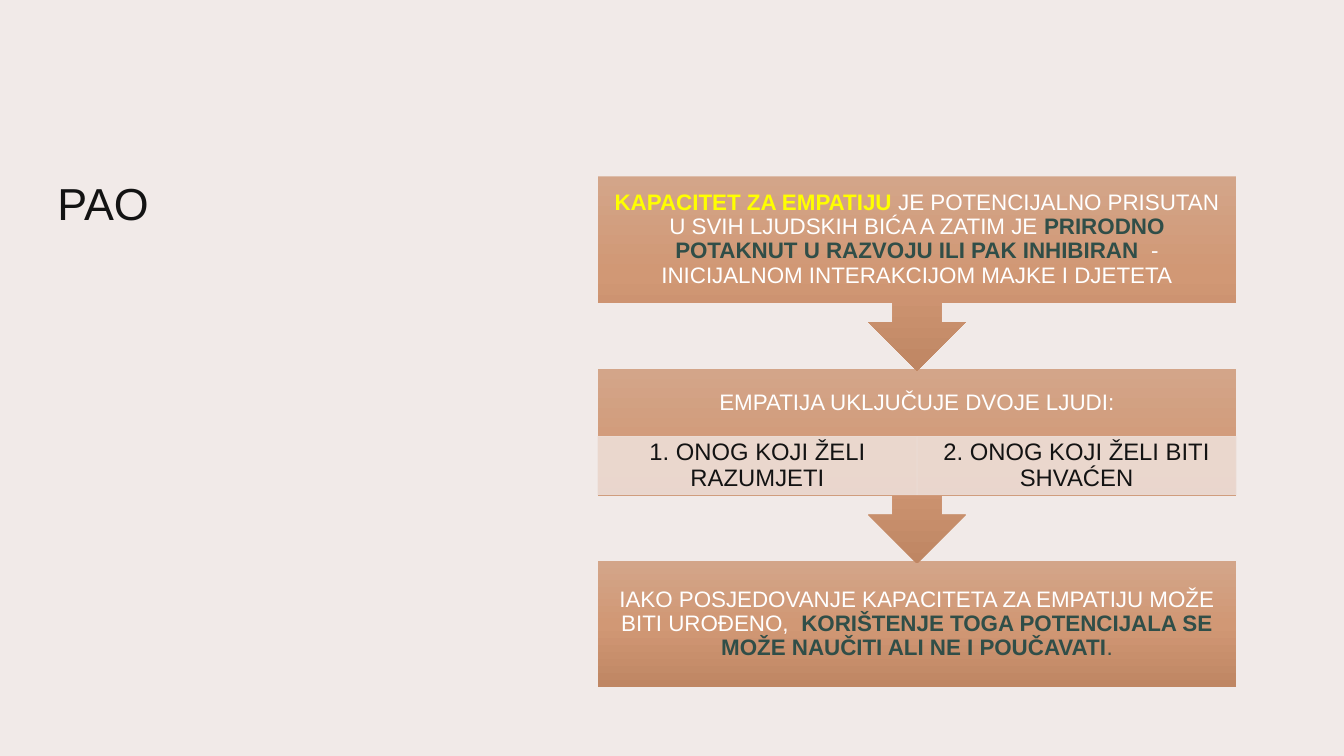
from copy import deepcopy

from pptx import Presentation
from pptx.dml.color import RGBColor
from pptx.enum import shapes, text
from pptx.oxml.ns import qn
from pptx.util import Inches, Pt
from lxml import etree

BACKGROUND = RGBColor(0xF1, 0xEA, 0xE8)
INK = RGBColor(0x13, 0x13, 0x13)
WHITE = RGBColor(0xFF, 0xFF, 0xFF)
YELLOW = RGBColor(0xFF, 0xFF, 0x00)
GREEN = RGBColor(0x30, 0x4E, 0x48)
PALE = RGBColor(0xED, 0xDE, 0xD7)
COPPER = [(0, RGBColor(0xD3, 0xA5, 0x89)), (0.5, RGBColor(0xD1, 0x98, 0x75)),
          (1, RGBColor(0xBF, 0x86, 0x63))]


def write(shape, runs, size, align, anchor, margins):
    """Fill a shape with one paragraph of (text, colour, bold) runs."""
    frame = shape.text_frame
    settings = {"word_wrap": True, "vertical_anchor": anchor}
    sides = ("margin_left", "margin_top", "margin_right", "margin_bottom")
    settings.update(zip(sides, map(Inches, margins)))
    for name, value in settings.items():
        setattr(frame, name, value)
    paragraph = frame.paragraphs[0]
    paragraph.alignment = align
    paragraph.line_spacing = 0.9
    for words, color, bold in runs:
        run = paragraph.add_run()
        run.text = words
        for name, value in {"name": "Arial", "size": Pt(size), "bold": bold}.items():
            setattr(run.font, name, value)
        run.font.color.rgb = color


def add_block(slide, kind, left, top, width, height):
    shape = slide.shapes.add_shape(kind, *map(Inches, (left, top, width, height)))
    shape.shadow.inherit = False
    return shape


presentation = Presentation()
presentation.slide_width = Inches(13.33)
presentation.slide_height = Inches(7.5)
slide = presentation.slides.add_slide(presentation.slide_layouts[5])
slide.background.fill.solid()
slide.background.fill.fore_color.rgb = BACKGROUND

# Title
title = slide.shapes.title
title.left, title.top, title.width, title.height = map(Inches, (0.47, 1.75, 4.53, 5.07))
write(title, [("PAO", INK, False)], 32, text.PP_ALIGN.LEFT, text.MSO_ANCHOR.TOP,
      (0.1, 0.05, 0.1, 0.05))

# Process steps, from top to bottom: shape, height, bottom margin, runs
LEFT, TOP, WIDTH, PITCH = 5.93, 1.75, 6.33, 1.91
CALLOUT = shapes.MSO_SHAPE.DOWN_ARROW_CALLOUT
steps = [
    (CALLOUT, 1.93, 0.12, [
        ("KAPACITET ZA EMPATIJU ", YELLOW, True),
        ("JE POTENCIJALNO PRISUTAN U SVIH LJUDSKIH BIĆA A ZATIM JE ", WHITE, False),
        ("PRIRODNO POTAKNUT U RAZVOJU ILI PAK INHIBIRAN  ", GREEN, True),
        ("- INICIJALNOM INTERAKCIJOM MAJKE I DJETETA", WHITE, False)]),
    (CALLOUT, 1.93, 0.69, [("EMPATIJA UKLJUČUJE DVOJE LJUDI:", WHITE, False)]),
    (shapes.MSO_SHAPE.RECTANGLE, 1.25, 0.12, [
        ("IAKO POSJEDOVANJE KAPACITETA ZA EMPATIJU MOŽE BITI UROĐENO,  ", WHITE, False),
        ("KORIŠTENJE TOGA POTENCIJALA SE MOŽE NAUČITI ALI NE I POUČAVATI", GREEN, True),
        (".", GREEN, False)]),
]
# Lower steps lie behind the arrow tips above them
for index, (kind, height, bottom, runs) in reversed(list(enumerate(steps))):
    step = add_block(slide, kind, LEFT, TOP + index * PITCH, WIDTH, height)
    if kind == CALLOUT:
        for number, value in enumerate((0.25, 0.25, 0.25, 0.65)):
            step.adjustments[number] = value
    step.line.fill.background()
    step.fill.gradient()
    step.fill.gradient_angle = 270
    stop_list = next(step.element.iter(qn("a:gsLst")))
    stop_list.insert(1, deepcopy(stop_list[0]))
    for stop, (position, color) in zip(step.fill.gradient_stops, COPPER):
        stop.position = position
        stop.color.rgb = color
        for effect in list(next(stop_list[COPPER.index((position, color))].iter(qn("a:srgbClr")))):
            effect.getparent().remove(effect)
    write(step, runs, 16, text.PP_ALIGN.CENTER, text.MSO_ANCHOR.MIDDLE,
          (0.12, 0.12, 0.12, bottom))

# The two people, side by side in the middle step
people = ["1. ONOG KOJI ŽELI RAZUMJETI", "2. ONOG KOJI ŽELI BITI SHVAĆEN"]
for index, person in enumerate(people):
    cell = add_block(slide, shapes.MSO_SHAPE.RECTANGLE,
                     LEFT + index * WIDTH / 2, 4.33, WIDTH / 2, 0.58)
    for fill in (cell.fill, cell.line.fill):
        fill.solid()
        fill.fore_color.rgb = PALE
    cell.line.width = Pt(0.5)
    for color in cell.element.spPr.iter(qn("a:srgbClr")):
        etree.SubElement(color, qn("a:alpha"), val="90000")
    write(cell, [(person, INK, False)], 17, text.PP_ALIGN.CENTER,
          text.MSO_ANCHOR.MIDDLE, (0.13, 0.02, 0.13, 0.02))

presentation.save("out.pptx")
